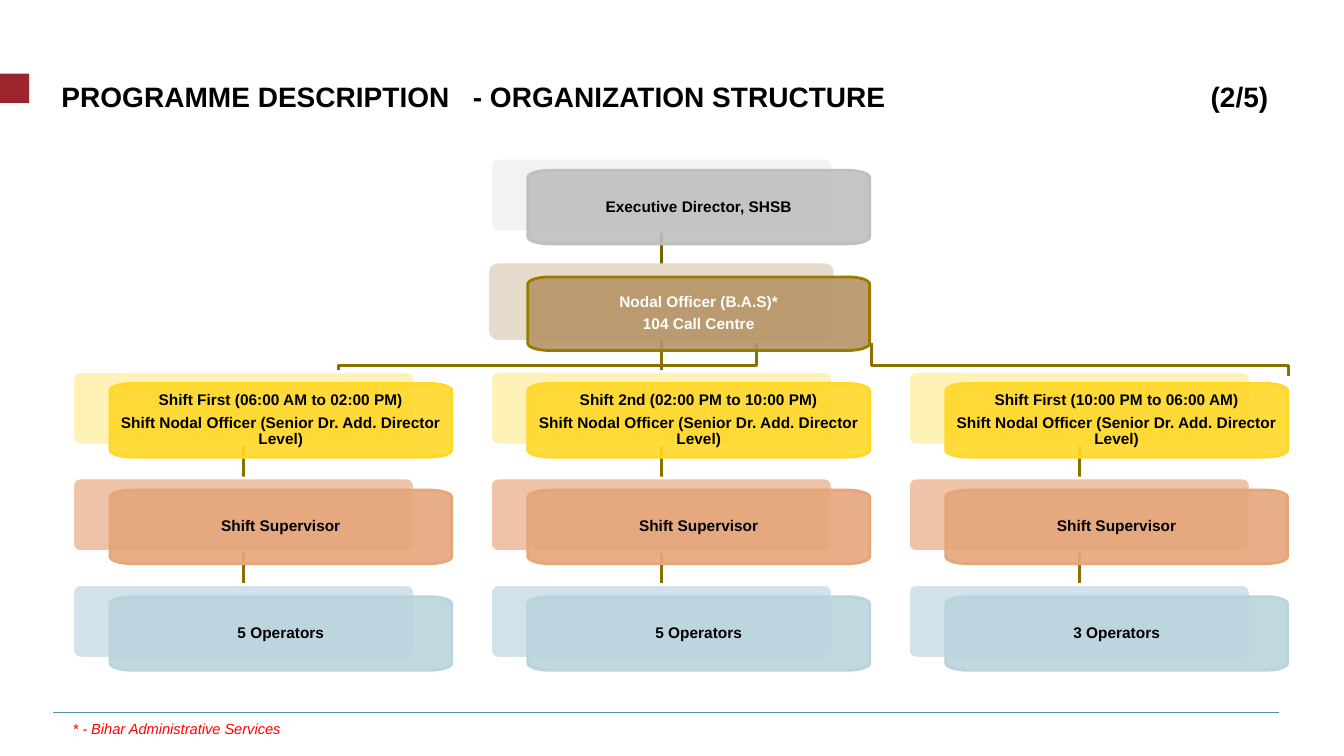
"""Builds the organization structure slide of the call centre programme."""
import math

from lxml import etree
from pptx import Presentation, util as u
from pptx.dml.color import RGBColor
from pptx.enum import shapes, text
from pptx.oxml.ns import qn

LEFT, TOP = 0.72, 1.57
COLUMN, ROW = 4.145, 1.0575
WIDTH, HEIGHT = 3.39, 0.73
SHIFT_X, SHIFT_Y = 0.37, 0.12
CORNER_X, CORNER_Y = 0.22, 0.07
LINK = "897100"
NODAL_OFFICER = "Shift Nodal Officer (Senior Dr. Add. Director Level)"
SHIFTS = [
    ("Shift First (06:00 AM to 02:00 PM)", "5 Operators"),
    ("Shift 2nd (02:00 PM to 10:00 PM)", "5 Operators"),
    ("Shift First (10:00 PM to 06:00 AM)", "3 Operators"),
]


def color(value):
    """Turn a hex string into a colour."""
    return RGBColor.from_string(value)


def inches(*lengths):
    """Turn lengths in inches into slide units."""
    return [u.Inches(length) for length in lengths]


def corner(column, row):
    """Give the left and top of a grid cell."""
    return LEFT + column * COLUMN, TOP + row * ROW


def paint(shape, fill, line, opacity=100):
    """Fill and outline a shape without a shadow."""
    shape.shadow.inherit = False
    shape.fill.solid()
    shape.fill.fore_color.rgb = color(fill)
    if opacity < 100:
        tone = shape.fill._xPr.find(qn("a:solidFill"))[0]
        etree.SubElement(tone, qn("a:alpha"), val=str(opacity * 1000))
    if line:
        shape.line.color.rgb = color(line)
        shape.line.width = u.Pt(2)
    else:
        shape.line.fill.background()


def style(para, size, ink, bold=False, italic=False):
    """Format every run of a paragraph."""
    for span in para.runs:
        span.font.name = "Arial"
        span.font.size = u.Pt(size)
        span.font.color.rgb = color(ink)
        span.font.bold = bold
        span.font.italic = italic


def set_margins(frame, left, top, right, bottom):
    """Set the four insets of a text frame."""
    frame.margin_left, frame.margin_top, frame.margin_right, frame.margin_bottom = inches(
        left, top, right, bottom)


def draw_path(page, points, close=False):
    """Draw an outline through points given in inches."""
    places = [inches(*point) for point in points]
    builder = page.shapes.build_freeform(*places[0])
    builder.add_line_segments(places[1:], close=close)
    return builder.convert_to_shape()


def card_outline(left, top):
    """Give the points of a card with elliptical corners."""
    middle_x, middle_y = left + WIDTH / 2, top + HEIGHT / 2
    points = []
    for quarter, (side_x, side_y) in enumerate([(1, 1), (-1, 1), (-1, -1), (1, -1)]):
        center_x = middle_x + side_x * (WIDTH / 2 - CORNER_X)
        center_y = middle_y + side_y * (HEIGHT / 2 - CORNER_Y)
        for step in range(9):
            angle = math.radians(90 * quarter + 11.25 * step)
            points.append((center_x + CORNER_X * math.cos(angle),
                           center_y + CORNER_Y * math.sin(angle)))
    return points


def add_card(page, column, row, lines, back, front, back_line="FFFFFF", edge=None, ink="000000"):
    """Add a back plate and the translucent card with its text."""
    left, top = corner(column, row)
    plate = page.shapes.add_shape(
        shapes.MSO_SHAPE.ROUNDED_RECTANGLE, *inches(left, top, WIDTH, HEIGHT))
    plate.adjustments[0] = 0.1
    paint(plate, back, back_line)
    card = draw_path(page, card_outline(left + SHIFT_X, top + SHIFT_Y), close=True)
    paint(card, front, edge or front, opacity=90)
    frame = card.text_frame
    frame.text = "\n".join(lines)
    frame.word_wrap = True
    frame.vertical_anchor = text.MSO_ANCHOR.MIDDLE
    set_margins(frame, 0.08, 0.08, 0.08, 0.08)
    for para in frame.paragraphs:
        para.alignment = text.PP_ALIGN.CENTER
        para.line_spacing = 0.9
        para.space_after = u.Pt(4)
        style(para, 11, ink, bold=True)


def add_line(page, start, end, ink, width):
    """Add a straight line without a shadow."""
    line = page.shapes.add_connector(
        shapes.MSO_CONNECTOR.STRAIGHT, *inches(*start, *end))
    line.line.color.rgb = color(ink)
    line.line.width = u.Pt(width)
    etree.SubElement(line._element.spPr, qn("a:effectLst"))


def add_link(page, column, row, ink=LINK):
    """Link a plate with the plate in the row below."""
    left, top = corner(column, row)
    middle = left + WIDTH / 2
    add_line(page, (middle, top + HEIGHT), (middle, top + ROW), ink, 2)


def add_branch(page, start, end):
    """Link the nodal officer with an outer shift by a bent line."""
    top = 3.4
    bend = draw_path(page, [(start, top), (start, top + 0.23),
                            (end, top + 0.23), (end, top + 0.33)])
    bend.shadow.inherit = False
    bend.fill.background()
    bend.line.color.rgb = color(LINK)
    bend.line.width = u.Pt(2)


def add_title(page):
    """Place the title with its page count at the right."""
    title = page.shapes.title
    title.left, title.top, title.width, title.height = inches(0.53, 0.7, 12.15, 0.39)
    frame = title.text_frame
    frame.text = "PROGRAMME DESCRIPTION\t- ORGANIZATION STRUCTURE\t(2/5)"
    frame.word_wrap = True
    frame.auto_size = text.MSO_AUTO_SIZE.NONE
    frame.vertical_anchor = text.MSO_ANCHOR.TOP
    set_margins(frame, 0.08, 0, 0, 0)
    para = frame.paragraphs[0]
    para.alignment = text.PP_ALIGN.LEFT
    para.line_spacing = u.Pt(30.7)
    style(para, 20, "000000", bold=True)
    stops = etree.SubElement(para._p.get_or_add_pPr(), qn("a:tabLst"))
    for place, side in [(4.08, "l"), (11.97, "r")]:
        etree.SubElement(stops, qn("a:tab"), pos=str(u.Inches(place)), algn=side)


def add_footnote(page):
    """Add the footnote below the rule."""
    box = page.shapes.add_textbox(*inches(LEFT, 7.14, 10.68, 0.22))
    frame = box.text_frame
    frame.text = "* - Bihar Administrative Services"
    frame.word_wrap = True
    set_margins(frame, 0, 0, 0, 0)
    style(frame.paragraphs[0], 10.5, "FF0000", italic=True)


def main():
    """Build and save the slide."""
    deck = Presentation()
    deck.slide_width, deck.slide_height = inches(13.33, 7.5)
    page = deck.slides.add_slide(deck.slide_layouts.get_by_name("Title Only"))
    marker = page.shapes.add_shape(shapes.MSO_SHAPE.RECTANGLE, *inches(0, 0.73, 0.29, 0.29))
    paint(marker, "9B242D", None)
    add_line(page, (0.53, 7.07), (12.69, 7.07), "5393AB", 0.5)
    add_title(page)

    add_link(page, 1, 0, "796300")
    add_link(page, 1, 1)
    for column in range(len(SHIFTS)):
        for row in (2, 3):
            add_link(page, column, row)
    add_branch(page, 7.5, 3.36)
    add_branch(page, 8.64, 12.78)

    add_card(page, 1, 0, ["Executive Director, SHSB"], "F2F2F2", "BFBFBF")
    add_card(page, 1, 1, ["Nodal Officer (B.A.S)*", "104 Call Centre"], "E7DBCC", "B69365",
             back_line="E7DBCC", edge="977C00", ink="FFFFFF")
    for column, (hours, operators) in enumerate(SHIFTS):
        add_card(page, column, 2, [hours, NODAL_OFFICER], "FFF2B7", "FFD828")
        add_card(page, column, 3, ["Shift Supervisor"], "EEC3A7", "E5A67B")
        add_card(page, column, 4, [operators], "D1E2E9", "BAD4DD")
    add_footnote(page)
    deck.save("out.pptx")


if __name__ == "__main__":
    main()
